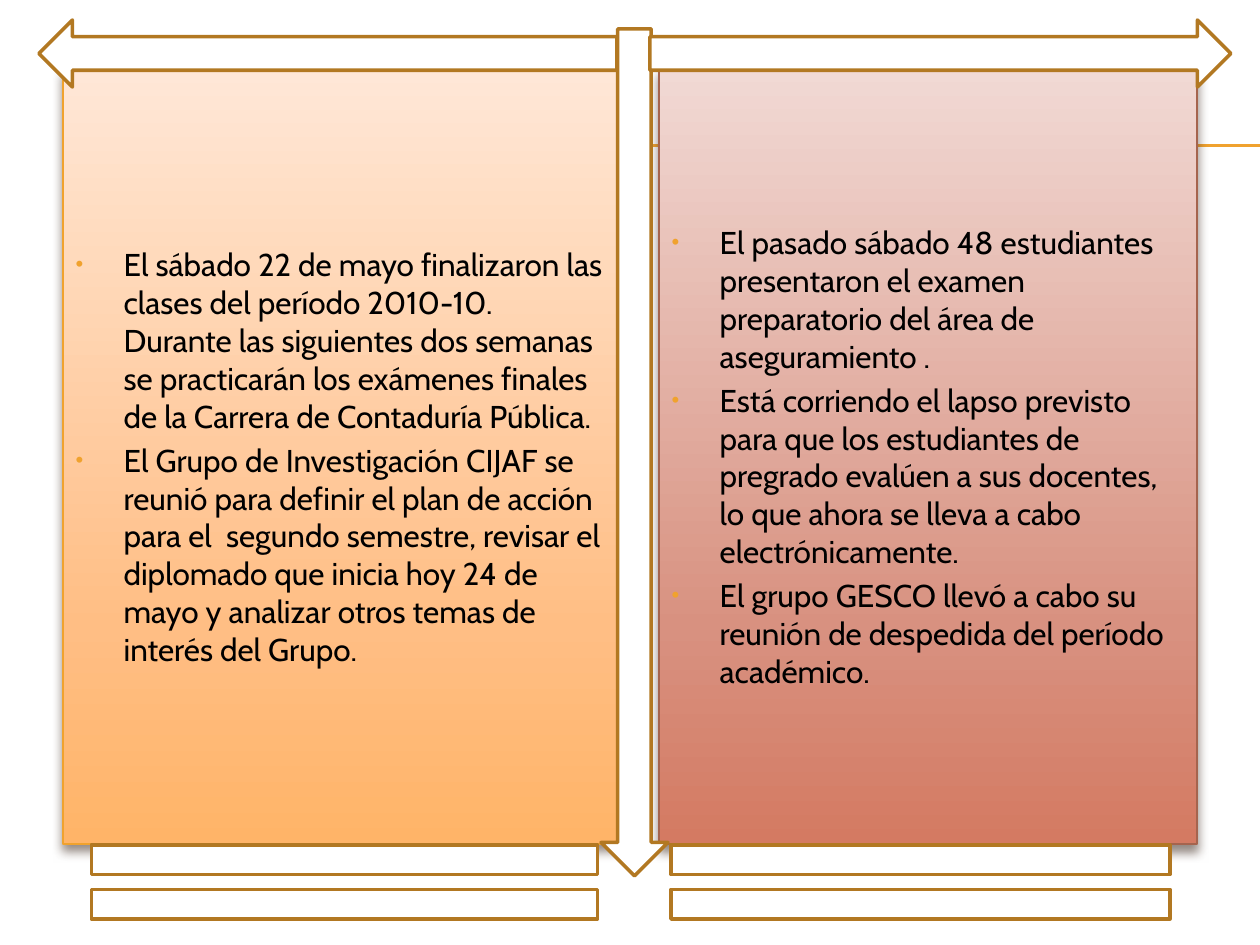
from dataclasses import dataclass

from lxml import etree
from pptx import Presentation, util as u
from pptx.dml.color import RGBColor
from pptx.enum import shapes, text
from pptx.oxml import parse_xml
from pptx.oxml.ns import nsdecls, qn

EMU_PER_PX = 914400 / 126


@dataclass(frozen=True)
class Theme:
    font: str = "Cabin"
    body_size: int = 18
    ink: str = "000000"
    paper: str = "FFFFFF"
    accent: str = "F0A22E"
    arrow_line: str = "B27822"
    shadow: str = "4E3B30"


theme = Theme()


def px(*lengths):
    return [u.Emu(round(length * EMU_PER_PX)) for length in lengths]


def write_bullet(paragraph, content, *, size, color, bullet_color, indent):
    """Fill a paragraph with a small coloured bullet and a hanging indent."""
    run = paragraph.add_run()
    run.text = content
    run.font.name = theme.font
    run.font.size = u.Pt(size)
    run.font.color.rgb = RGBColor.from_string(color)
    properties = paragraph._p.get_or_add_pPr()
    hanging = px(indent)[0]
    properties.set("marL", str(hanging))
    properties.set("indent", str(-hanging))
    for xml in (
        f'<a:buClr {nsdecls("a")}><a:srgbClr val="{bullet_color}"/></a:buClr>',
        f'<a:buSzPct {nsdecls("a")} val="70000"/>',
        f'<a:buFont {nsdecls("a")} typeface="Arial"/>',
        f'<a:buChar {nsdecls("a")} char="•"/>',
    ):
        properties.append(parse_xml(xml))


presentation = Presentation()
presentation.slide_width, presentation.slide_height = px(1260, 945)
slide = presentation.slides.add_slide(presentation.slide_layouts.get_by_name("Two Content"))
title = slide.shapes.title._element
title.getparent().remove(title)

# Double rule, behind everything else
for position, y in enumerate((145, 146)):
    rule = slide.shapes.add_connector(shapes.MSO_CONNECTOR.STRAIGHT, *px(71, y, 1260, y))
    rule.line.color.rgb = RGBColor.from_string(theme.accent)
    rule.line.width = u.Pt(0.75)
    etree.SubElement(rule._element.spPr, qn("a:effectLst"))
    slide.shapes._spTree.insert(2 + position, rule._element)

# News panels: left, width, border, gradient colours, items
panels = [
    (63, 557, "F0A22E", ("FFE7D7", "FFBE84", "FFB468"), [
        "El sábado 22 de mayo finalizaron las clases del período 2010-10. Durante las "
        "siguientes dos semanas se practicarán los exámenes finales de la Carrera de "
        "Contaduría Pública.",
        "El Grupo de Investigación CIJAF se reunió para definir el plan de acción para el  "
        "segundo semestre, revisar el diplomado que inicia hoy 24 de mayo y analizar otros "
        "temas de interés del Grupo.",
    ]),
    (659, 538, "A5644E", ("F1D9D4", "D89180", "D47A62"), [
        "El pasado sábado 48 estudiantes presentaron el examen preparatorio del área de "
        "aseguramiento .",
        "Está corriendo el lapso previsto para que los estudiantes de pregrado evalúen a sus "
        "docentes, lo que ahora se lleva a cabo electrónicamente.",
        "El grupo GESCO llevó a cabo su reunión de despedida del período académico.",
    ]),
]
for panel, (left, width, border, colors, items) in zip(slide.placeholders, panels):
    panel.left, panel.top, panel.width, panel.height = px(left, 69, width, 775)
    stops = "".join(
        f'<a:gs pos="{percent * 1000}"><a:srgbClr val="{color}"/></a:gs>'
        for percent, color in zip((0, 72, 100), colors)
    )
    properties = panel._element.spPr
    properties.append(parse_xml(
        f'<a:gradFill {nsdecls("a")} rotWithShape="1"><a:gsLst>{stops}</a:gsLst>'
        '<a:lin ang="5400000" scaled="0"/></a:gradFill>'
    ))
    panel.line.color.rgb = RGBColor.from_string(border)
    panel.line.width = u.Pt(0.79)
    properties.append(parse_xml(
        f'<a:effectLst {nsdecls("a")}><a:outerShdw blurRad="{u.Pt(6)}" dist="{u.Pt(4)}" '
        f'dir="5400000" rotWithShape="0"><a:srgbClr val="{theme.shadow}">'
        '<a:alpha val="60000"/></a:srgbClr></a:outerShdw></a:effectLst>'
    ))
    frame = panel.text_frame
    frame.auto_size = text.MSO_AUTO_SIZE.NONE
    frame.vertical_anchor = text.MSO_ANCHOR.MIDDLE
    for number, item in enumerate(items):
        paragraph = frame.add_paragraph() if number else frame.paragraphs[0]
        write_bullet(paragraph, item, size=theme.body_size, color=theme.ink,
                     bullet_color=theme.accent, indent=48)

# Arrows framing the panels, and the double bars below them
ornaments = [
    (shapes.MSO_SHAPE.DOWN_ARROW, 601, 29, 67, 847),
    (shapes.MSO_SHAPE.RIGHT_ARROW, 650, 20, 581, 67),
    (shapes.MSO_SHAPE.LEFT_ARROW, 39, 20, 578, 67),
    (shapes.MSO_SHAPE.MATH_EQUAL, 0, 819, 689, 126),
    (shapes.MSO_SHAPE.MATH_EQUAL, 581, 819, 679, 126),
]
for kind, *box in ornaments:
    shape = slide.shapes.add_shape(kind, *px(*box))
    shape.shadow.inherit = False
    shape.fill.solid()
    shape.fill.fore_color.rgb = RGBColor.from_string(theme.paper)
    shape.line.color.rgb = RGBColor.from_string(theme.arrow_line)
    shape.line.width = u.Pt(2)

presentation.save("out.pptx")
